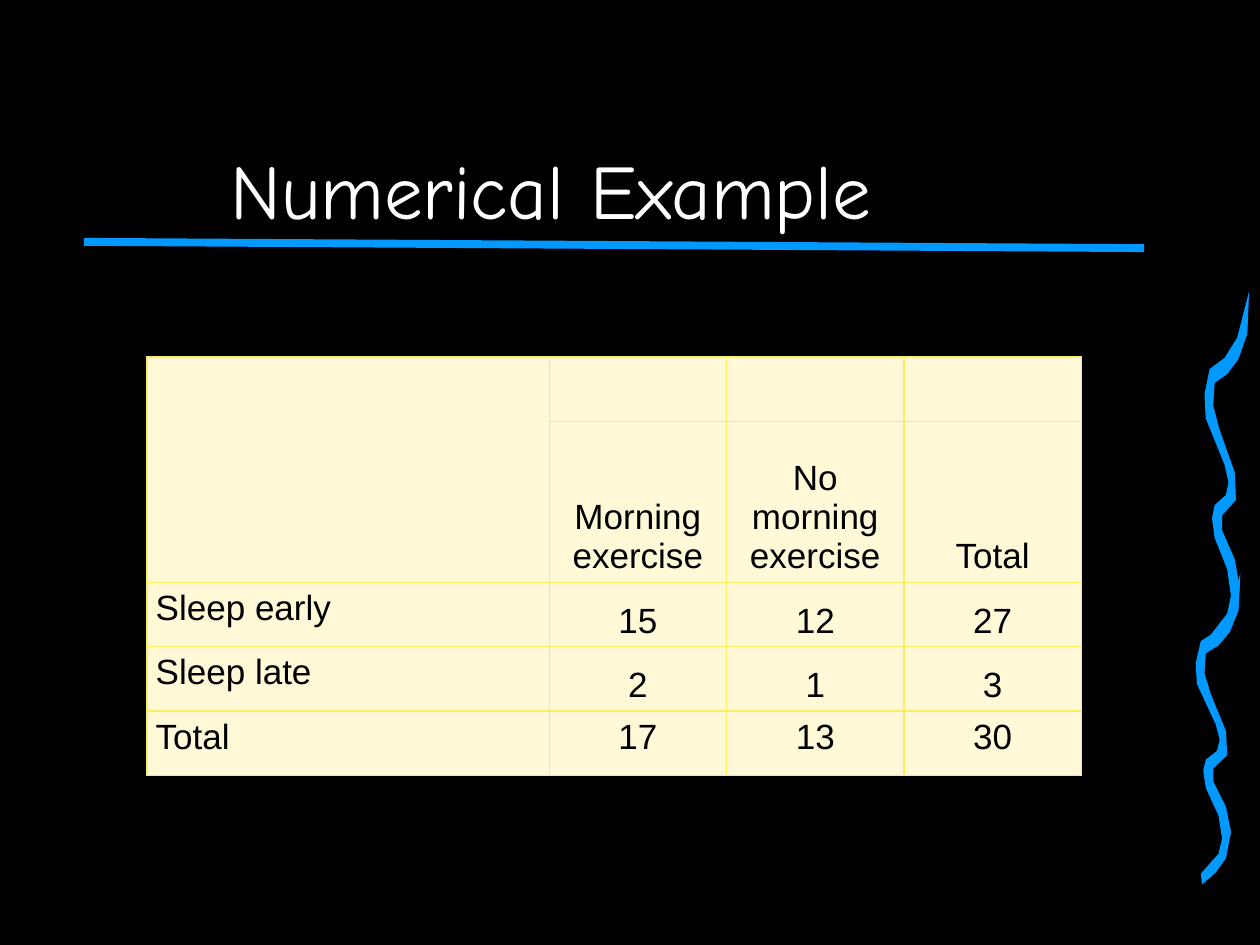
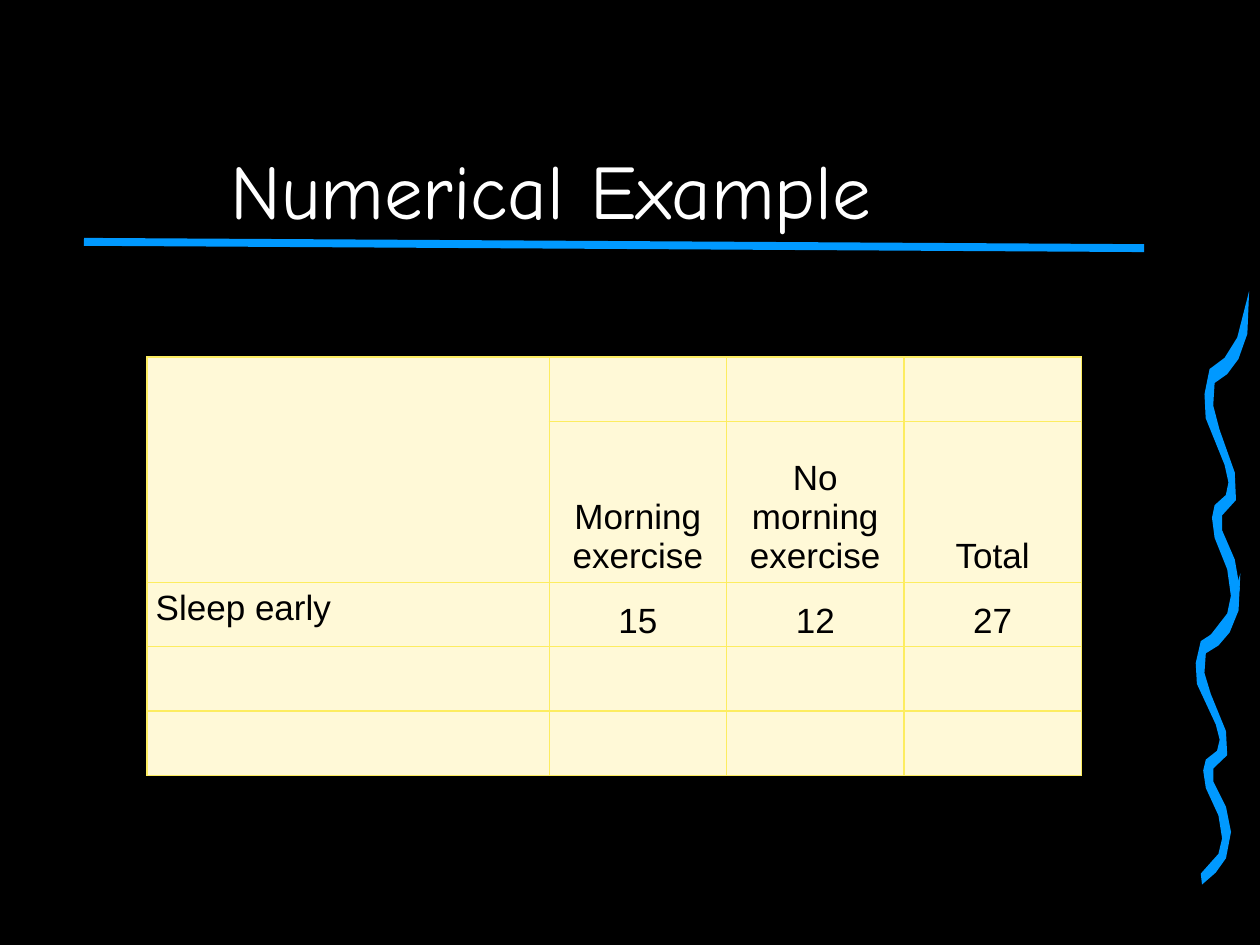
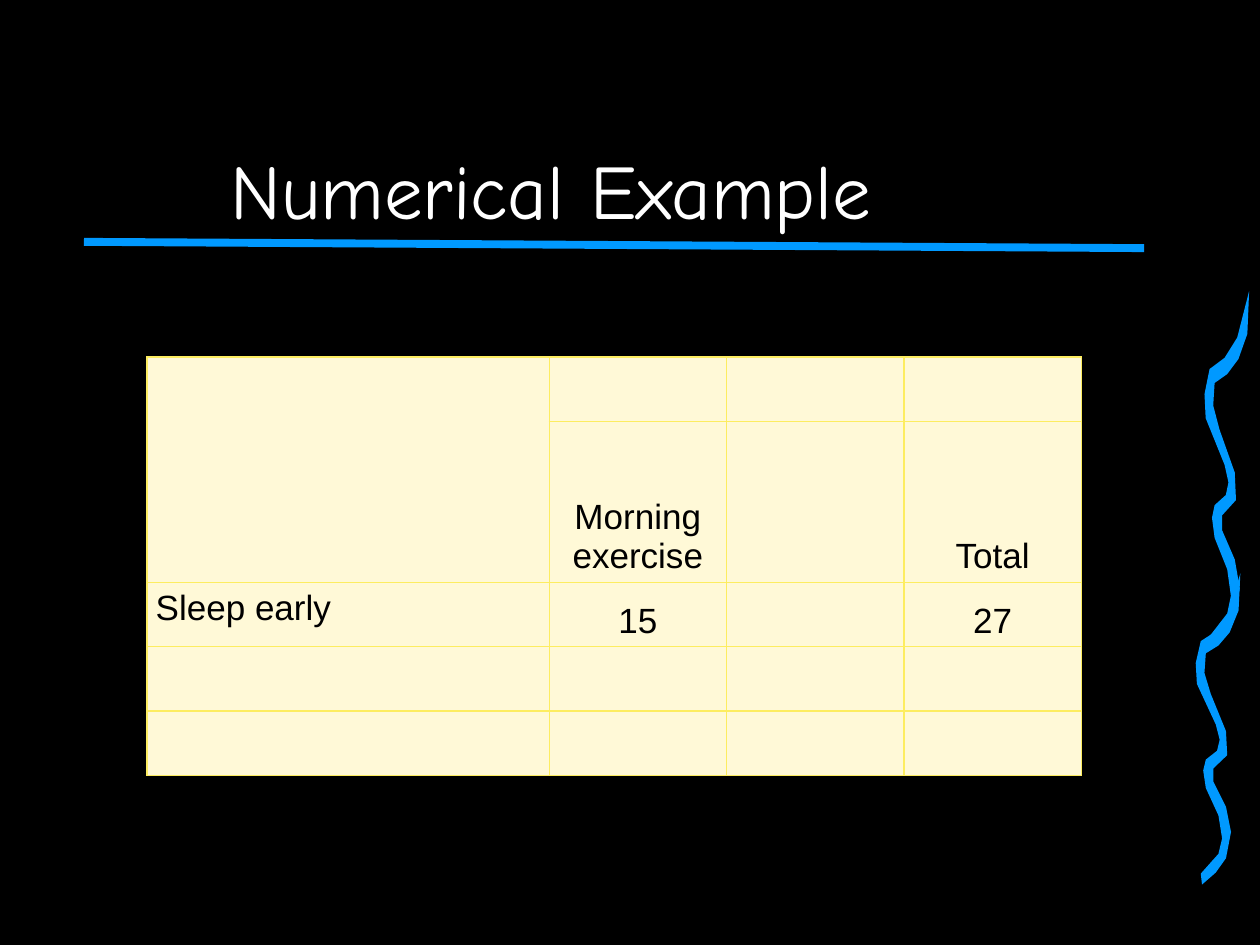
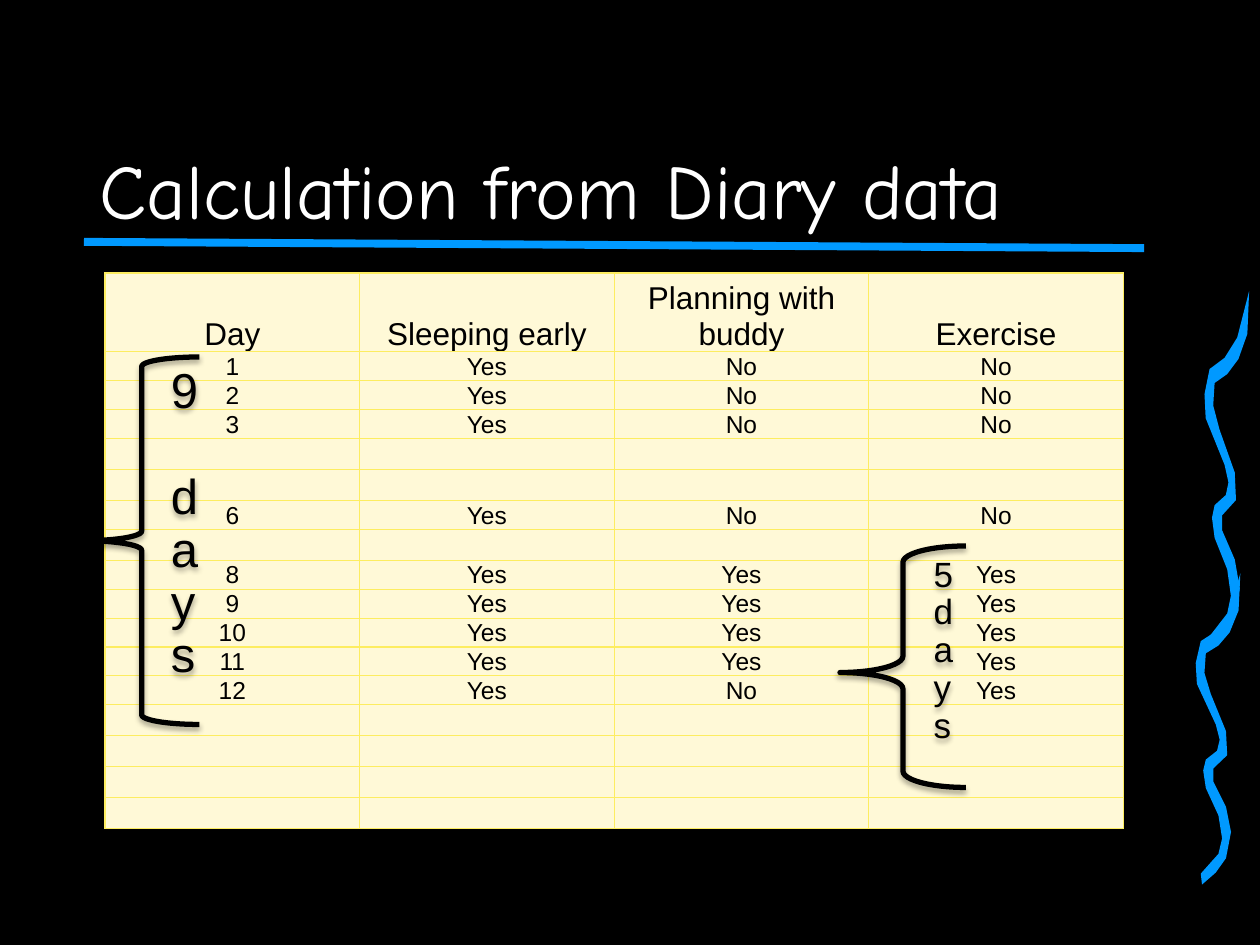
import pptx
import pptx.dml.color
import pptx.enum.shapes
import pptx.enum.text
import pptx.oxml
import pptx.oxml.ns
import pptx.util
from lxml import etree

Pt = pptx.util.Pt
RGBColor = pptx.dml.color.RGBColor
ALIGN = pptx.enum.text.PP_ALIGN
ANCHOR = pptx.enum.text.MSO_ANCHOR
SHAPE = pptx.enum.shapes.MSO_SHAPE

BLACK = RGBColor(0x00, 0x00, 0x00)
WHITE = RGBColor(0xFF, 0xFF, 0xFF)
BLUE = RGBColor(0x00, 0x99, 0xFF)
CREAM = RGBColor(0xFF, 0xF9, 0xD7)
YELLOW = RGBColor(0xFD, 0xED, 0x60)

TITLE_FORMAT = {"name": "Comic Neue", "size": Pt(44), "color": WHITE}
BODY_FORMAT = {"name": "Arial", "color": BLACK}

# Content: sleep and exercise counts
BLANK = ("", "", "", "")
HEADINGS = ("", "Morning exercise", "No morning exercise", "Total")
EARLY = ("Sleep early", "15", "12", "27")
LATE = ("Sleep late", "2", "1", "3")
TOTAL = ("Total", "17", "13", "30")
COUNT_TABLES = [
    [BLANK, HEADINGS, EARLY, LATE, TOTAL],
    [BLANK, HEADINGS, EARLY, BLANK, BLANK],
    [BLANK, ("", "Morning exercise", "", "Total"), ("Sleep early", "15", "", "27"), BLANK, BLANK],
]
COUNT_COLUMNS = [229.8, 101.4, 101.4, 101.4]
COUNT_ROWS = [36.72, 92.16, 36.72, 36.72, 36.72]

# Content: diary
DIARY = [
    ("Day", "Sleeping early", "Planning with buddy", "Exercise"),
    ("1", "Yes", "No", "No"),
    ("2", "Yes", "No", "No"),
    ("3", "Yes", "No", "No"),
    BLANK,
    BLANK,
    ("6", "Yes", "No", "No"),
    BLANK,
    ("8", "Yes", "Yes", "Yes"),
    ("9", "Yes", "Yes", "Yes"),
    ("10", "Yes", "Yes", "Yes"),
    ("11", "Yes", "Yes", "Yes"),
    ("12", "Yes", "No", "Yes"),
    BLANK,
    BLANK,
    BLANK,
    BLANK,
]
# text, font size, left, top, width, height, adjustments
BRACES = [
    ("5 days", 20, 480, 312, 72, 138, (0.13, 0.524)),
    ("9 days", 28, 48, 204, 66, 210, (0.083, 0.5)),
]

# Ribbon outline, and where each ribbon goes: left, top, vertical stretch
RIBBON = [
    (2.9, 197.3), (13, 184.3), (15.1, 174.2), (13, 159.1), (5.8, 141.1), (4.3, 129.6),
    (5.8, 122.4), (12.2, 116.6), (13.7, 109.4), (11.5, 99.4), (0.7, 72.7), (0, 59),
    (2.9, 44.6), (11.5, 38.2), (18.7, 26.6), (25.5, 0), (24.5, 24.5), (19.4, 38.9),
    (13, 47.5), (5.8, 52.6), (5, 65.5), (8.6, 79.2), (17.3, 103.7), (18, 119.5),
    (10.1, 128.2), (10.1, 136.8), (17.3, 153.4), (20.2, 169.9), (17.3, 187.2),
    (11.5, 196.6), (3.6, 204.5),
]
RIBBON_PLACES = [(683.3, 327.6, 0.87), (688.3, 166.3, 1)]


def format_font(font, values):
    for name, value in values.items():
        if name == "color":
            font.color.rgb = value
        else:
            setattr(font, name, value)


def write(paragraph, text, values, alignment):
    paragraph.alignment = alignment
    run = paragraph.add_run()
    run.text = text
    format_font(run.font, values)


def add_effects(shape, shadow=False):
    """Replace the theme shadow with a soft one, or with none."""
    effects = etree.SubElement(shape._element.spPr, pptx.oxml.ns.qn("a:effectLst"))
    if shadow:
        effects.append(pptx.oxml.parse_xml(
            f'<a:outerShdw {pptx.oxml.ns.nsdecls("a")} blurRad="{Pt(3.1)}" dist="{Pt(1.8)}"'
            ' dir="5400000" rotWithShape="0"><a:srgbClr val="000000">'
            '<a:alpha val="35000"/></a:srgbClr></a:outerShdw>'))


def add_ribbon(slide, left, top, stretch):
    points = [(Pt(left + x), Pt(top + y * stretch)) for x, y in RIBBON]
    builder = slide.shapes.build_freeform(*points[0])
    builder.add_line_segments(points[1:], close=True)
    ribbon = builder.convert_to_shape()
    ribbon.shadow.inherit = False
    ribbon.fill.solid()
    ribbon.fill.fore_color.rgb = BLUE
    ribbon.line.fill.background()


def add_slide(presentation, title):
    """Title slide frame: ribbons, rule and title."""
    slide = presentation.slides.add_slide(presentation.slide_layouts[5])
    for place in RIBBON_PLACES:
        add_ribbon(slide, *place)
    rule = slide.shapes.add_connector(
        pptx.enum.shapes.MSO_CONNECTOR.STRAIGHT, Pt(48), Pt(138.2), Pt(653.8), Pt(141.8))
    rule.line.color.rgb = BLUE
    rule.line.width = Pt(4.5)
    add_effects(rule)
    placeholder = slide.shapes.title
    placeholder.left, placeholder.top = Pt(48), Pt(0)
    placeholder.width, placeholder.height = Pt(534), Pt(138)
    frame = placeholder.text_frame
    frame.vertical_anchor = ANCHOR.BOTTOM
    write(frame.paragraphs[0], title, TITLE_FORMAT, ALIGN.CENTER)
    return slide


def add_borders(cell):
    properties = cell._tc.get_or_add_tcPr()
    for index, side in enumerate(("lnL", "lnR", "lnT", "lnB")):
        properties.insert(index, pptx.oxml.parse_xml(
            f'<a:{side} {pptx.oxml.ns.nsdecls("a")} w="{Pt(0.75)}"><a:solidFill>'
            f'<a:srgbClr val="{YELLOW}"/></a:solidFill></a:{side}>'))


def add_table(slide, left, top, columns, heights, rows, margins, cell_style):
    """cell_style(row, column) gives font size, alignment and anchor."""
    table = slide.shapes.add_table(
        len(rows), len(columns), Pt(left), Pt(top), Pt(sum(columns)), Pt(sum(heights))).table
    table.first_row = table.horz_banding = False
    for column, width in zip(table.columns, columns):
        column.width = Pt(width)
    for row, height in zip(table.rows, heights):
        row.height = Pt(height)
    for row_index, texts in enumerate(rows):
        for column_index, text in enumerate(texts):
            cell = table.cell(row_index, column_index)
            size, alignment, anchor = cell_style(row_index, column_index)
            for side, margin in margins.items():
                setattr(cell, f"margin_{side}", Pt(margin))
            cell.vertical_anchor = anchor
            cell.fill.solid()
            cell.fill.fore_color.rgb = CREAM
            add_borders(cell)
            paragraph = cell.text_frame.paragraphs[0]
            if text:
                write(paragraph, text, BODY_FORMAT | {"size": Pt(size)}, alignment)
            else:
                # Keeps an empty row from growing
                etree.SubElement(paragraph._p, pptx.oxml.ns.qn("a:endParaRPr"), sz="800")
    return table


def count_style(row, column):
    if column == 0:
        return 20, ALIGN.LEFT, ANCHOR.TOP
    return 20, ALIGN.CENTER, ANCHOR.TOP if row == 4 else ANCHOR.BOTTOM


def diary_style(row, column):
    return 18 if row == 0 else 14, ALIGN.CENTER, ANCHOR.BOTTOM


def add_brace(slide, text, size, left, top, width, height, adjustments):
    brace = slide.shapes.add_shape(SHAPE.LEFT_BRACE, Pt(left), Pt(top), Pt(width), Pt(height))
    for index, value in enumerate(adjustments):
        brace.adjustments[index] = value
    brace.fill.background()
    brace.line.color.rgb = BLACK
    brace.line.width = Pt(3)
    add_effects(brace, shadow=True)
    frame = brace.text_frame
    frame.word_wrap = True
    frame.vertical_anchor = ANCHOR.TOP
    paragraph = frame.paragraphs[0]
    paragraph.line_spacing = 0.9
    write(paragraph, text, BODY_FORMAT | {"size": Pt(size)}, ALIGN.LEFT)


def main():
    presentation = pptx.Presentation()
    presentation.slide_width, presentation.slide_height = Pt(720), Pt(540)
    background = presentation.slide_master.background.fill
    background.solid()
    background.fore_color.rgb = BLACK

    # Count tables
    for rows in COUNT_TABLES:
        slide = add_slide(presentation, "Numerical Example")
        margins = {"left": 5, "right": 5, "top": 3.6, "bottom": 3.6}
        table = add_table(slide, 84, 204, COUNT_COLUMNS, COUNT_ROWS, rows, margins, count_style)
        table.cell(0, 0).merge(table.cell(1, 0))

    # Diary table with braces
    slide = add_slide(presentation, "Calculation from Diary data")
    heights = [45] + [16.5 if any(row) else 17.75 for row in DIARY[1:]]
    margins = {"left": 0.75, "right": 0.75, "top": 0.75, "bottom": 0}
    add_table(slide, 60, 156, [145.5] * 4, heights, DIARY, margins, diary_style)
    for brace in BRACES:
        add_brace(slide, *brace)

    presentation.save("out.pptx")


if __name__ == "__main__":
    main()
